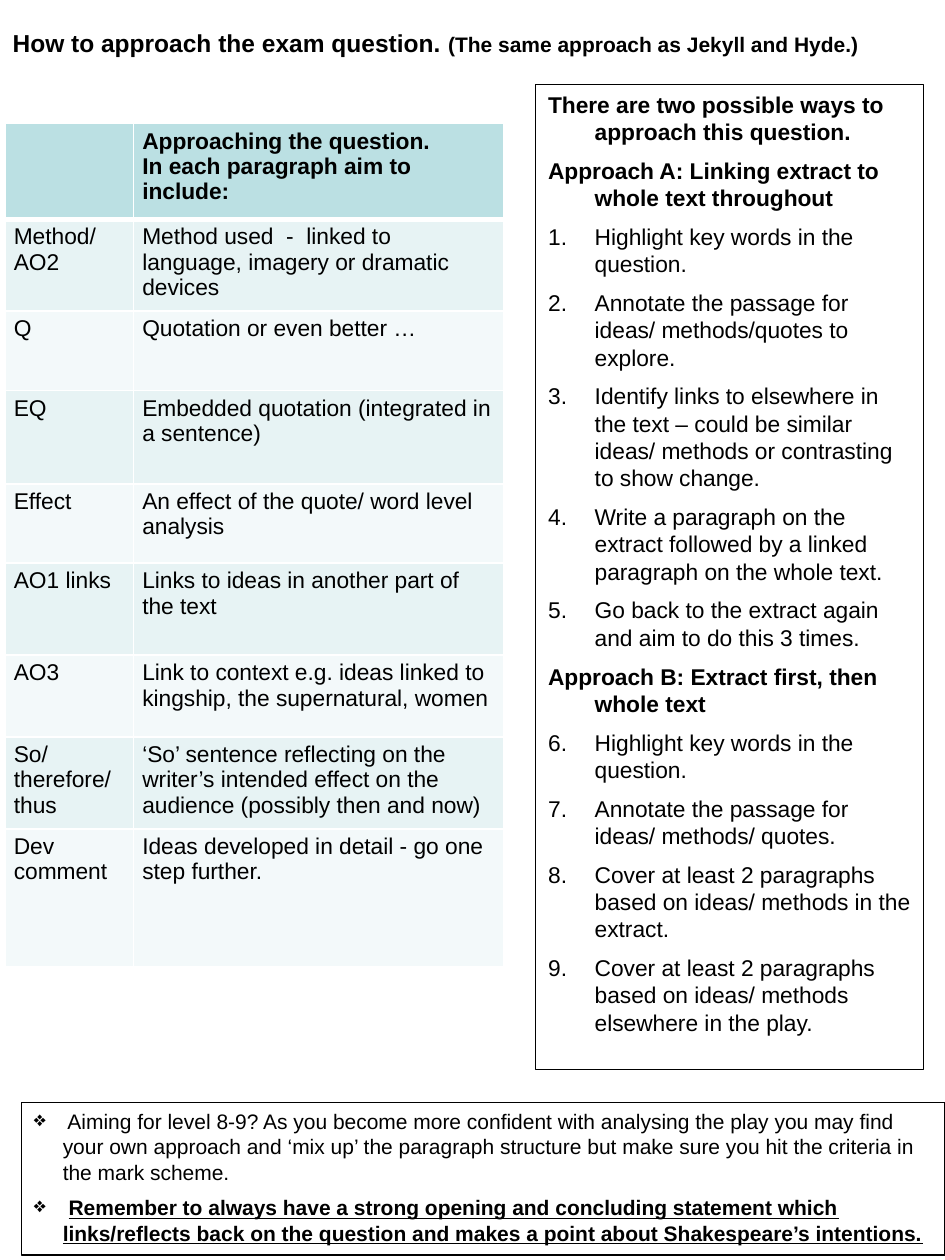
from lxml import etree
from pptx import Presentation
from pptx.dml.color import RGBColor
from pptx.enum import text
from pptx.oxml import ns
from pptx.util import Inches, Pt

BLACK = RGBColor(0, 0, 0)
WHITE = RGBColor(255, 255, 255)
HEADER = RGBColor(0xBB, 0xE0, 0xE3)
BANDS = [RGBColor(0xE7, 0xF3, 0xF4), RGBColor(0xF3, 0xF9, 0xFA)]

ROWS = [
    (0.76, "", "Approaching the question.\nIn each paragraph aim to include:"),
    (0.73, "Method/\nAO2", "Method used  -  linked to language, imagery or dramatic devices"),
    (0.63, "Q", "Quotation or even better …"),
    (0.74, "EQ", "Embedded quotation (integrated in a sentence)"),
    (0.63, "Effect", "An effect of the quote/ word level analysis"),
    (0.73, "AO1 links", "Links to ideas in another part of the text"),
    (0.65, "AO3", "Link to context e.g. ideas linked to kingship, the supernatural, women"),
    (0.73, "So/ therefore/ thus", "‘So’ sentence reflecting on the writer’s intended effect "
     "on the audience (possibly then and now)"),
    (1.09, "Dev comment", "Ideas developed in detail - go one step further."),
]
APPROACHES = [
    ("There are two possible ways to approach this question.", []),
    ("Approach A: Linking extract to whole text throughout", [
        "Highlight key words in the question.",
        "Annotate the passage for ideas/ methods/quotes to explore.",
        "Identify links to elsewhere in the text – could be similar ideas/ methods "
        "or contrasting to show change.",
        "Write a paragraph on the extract followed by a linked paragraph on the whole text.",
        "Go back to the extract again and aim to do this 3 times."]),
    ("Approach B: Extract first, then whole text", [
        "Highlight key words in the question.",
        "Annotate the passage for ideas/ methods/ quotes.",
        "Cover at least 2 paragraphs based on ideas/ methods in the extract.",
        "Cover at least 2 paragraphs based on ideas/ methods elsewhere in the play."]),
]
ADVICE = [
    [(" Aiming for level 8-9? As you become more confident with analysing the play you may "
      "find your own approach and ‘mix up’ the paragraph structure but make sure you hit "
      "the criteria in the mark scheme.", {})],
    [(" ", {"bold": True}),
     ("Remember to always have a strong opening and concluding statement which links/reflects "
      "back on the question and makes a point about Shakespeare’s intentions.",
      {"bold": True, "underline": True})],
]


def add_run(p, words, size, **formats):
    r = p.add_run()
    r.text = words
    r.font.color.rgb = BLACK
    for name, value in {"name": "Arial", "size": Pt(size), "bold": False, **formats}.items():
        setattr(r.font, name, value)


def format_paragraph(p, size, indent=0, bullet="buNone", **bullet_values):
    """Set spacing, hanging indent in inches and bullet."""
    for name, value in {"alignment": text.PP_ALIGN.LEFT, "line_spacing": 1.0,
                        "space_before": Pt(size / 2)}.items():
        setattr(p, name, value)
    pPr = p._p.get_or_add_pPr()
    pPr.set("marL", str(Inches(indent)))
    pPr.set("indent", str(Inches(-indent)))
    etree.SubElement(pPr, ns.qn("a:" + bullet), bullet_values)


prs = Presentation()
prs.slide_width, prs.slide_height = Inches(7.5), Inches(10)
s = prs.slides.add_slide(prs.slide_layouts[1])
title, approaches = s.placeholders
advice = s.shapes.add_textbox(0, 0, 0, 0)

for sp, box in [(title, (0, 0.17, 7.33, 0.34)), (approaches, (4.25, 0.67, 3.08, 7.82)),
                (advice, (0.17, 8.75, 7.33, 1.21))]:
    sp.left, sp.top, sp.width, sp.height = map(Inches, box)
    for name, value in {"word_wrap": True, "auto_size": text.MSO_AUTO_SIZE.NONE,
                        "vertical_anchor": text.MSO_ANCHOR.TOP}.items():
        setattr(sp.text_frame, name, value)
    if sp is not title:
        sp.line.color.rgb = BLACK
        sp.line.width = Pt(0.75)
approaches.text_frame.margin_right = Inches(0.08)

# Title
p = title.text_frame.paragraphs[0]
format_paragraph(p, 14)
add_run(p, "How to approach the exam question. ", 14, bold=True)
add_run(p, "(The same approach as Jekyll and Hyde.)", 12, bold=True)

# Two approaches, numbered straight through
tf = approaches.text_frame
p = tf.paragraphs[0]
number = 1
for heading, steps in APPROACHES:
    if p is None:
        p = tf.add_paragraph()
    format_paragraph(p, 13, 0.37)
    add_run(p, heading, 13, bold=True)
    first = str(number)
    for step in steps:
        p = tf.add_paragraph()
        format_paragraph(p, 13, 0.37, "buAutoNum", type="arabicPeriod", startAt=first)
        add_run(p, step, 13)
        number += 1
    p = None

# Advice
tf = advice.text_frame
for i, runs in enumerate(ADVICE):
    p = tf.add_paragraph() if i else tf.paragraphs[0]
    format_paragraph(p, 12, 0.23, "buChar", char="❖")
    for words, formats in runs:
        add_run(p, words, 12, **formats)

# Paragraph structure table
table = s.shapes.add_table(len(ROWS), 2, Inches(0.04), Inches(0.98),
                           Inches(3.96), Inches(6.69)).table
for column, width in zip(table.columns, (1.02, 2.94)):
    column.width = Inches(width)
for i, (height, *labels) in enumerate(ROWS):
    table.rows[i].height = Inches(height)
    for j, label in enumerate(labels):
        cell = table.cell(i, j)
        cell.margin_left = cell.margin_right = Inches(0.07)
        cell.margin_top = cell.margin_bottom = Inches(0.04)
        for k, words in enumerate(label.split("\n")):
            p = cell.text_frame.add_paragraph() if k else cell.text_frame.paragraphs[0]
            if words:
                add_run(p, words, 13, bold=i == 0)
        tcPr = cell._tc.get_or_add_tcPr()
        for side in "LRTB":
            heavy = (i, side) in [(0, "B"), (1, "T")]
            ln = etree.SubElement(tcPr, ns.qn("a:ln" + side), w=str(Pt(3 if heavy else 1)))
            fill = etree.SubElement(ln, ns.qn("a:solidFill"))
            etree.SubElement(fill, ns.qn("a:srgbClr"), val=str(WHITE))
        cell.fill.solid()
        cell.fill.fore_color.rgb = BANDS[(i - 1) % 2] if i else HEADER

prs.save("out.pptx")
